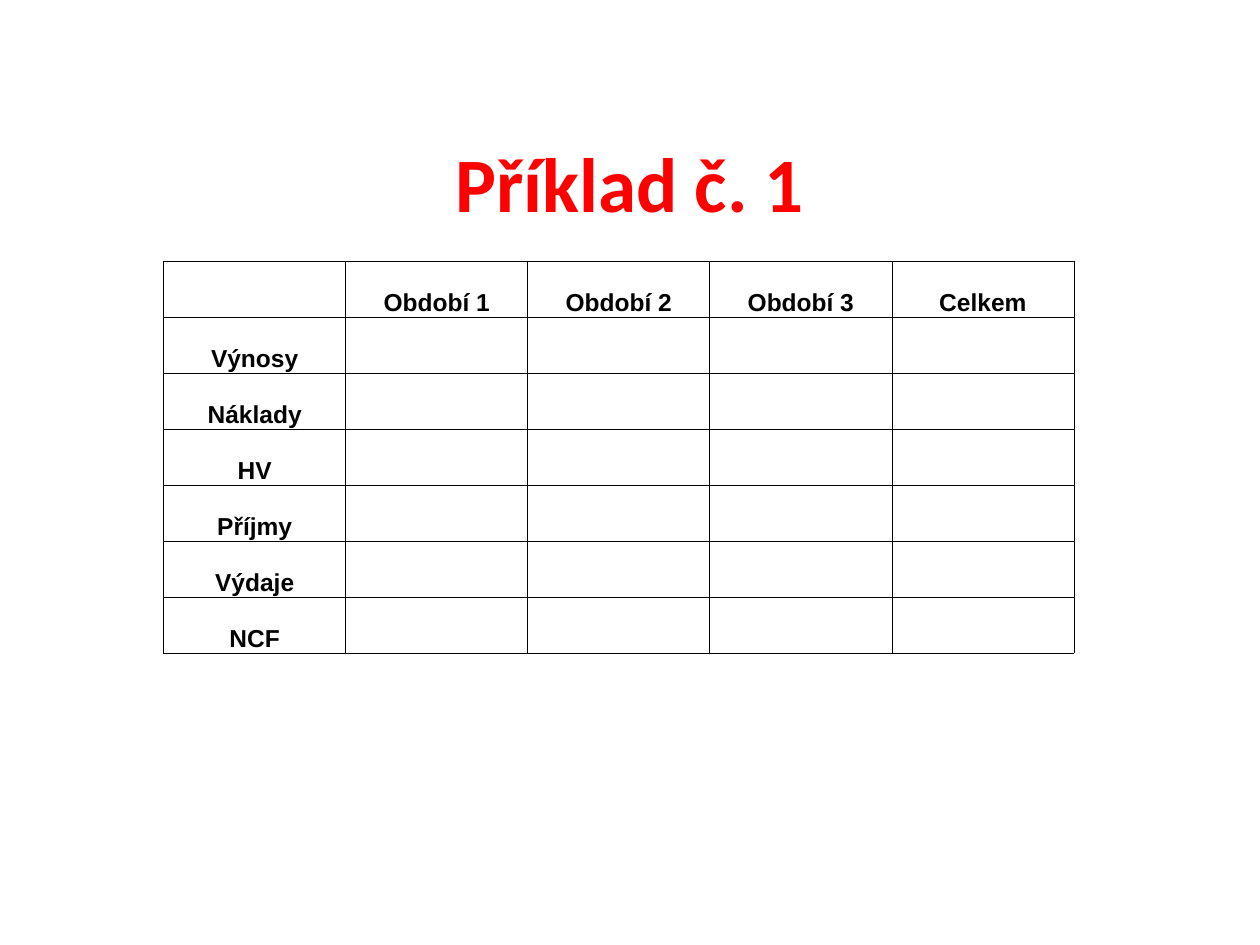
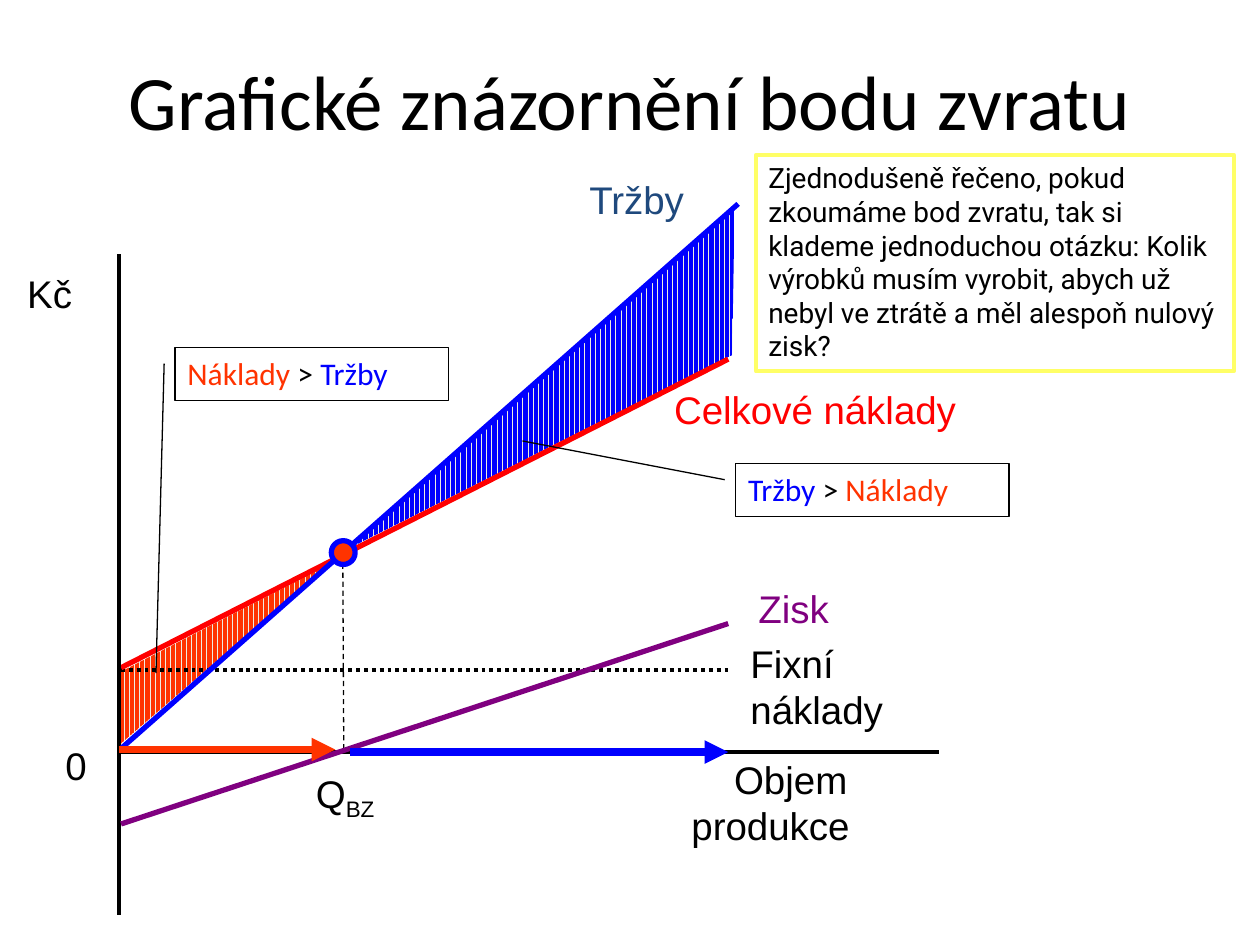
from lxml import etree
from pptx import Presentation
from pptx.dml.color import RGBColor
from pptx.enum.dml import MSO_LINE, MSO_PATTERN
from pptx.enum.shapes import MSO_CONNECTOR, MSO_SHAPE
from pptx.enum.text import MSO_ANCHOR, PP_ALIGN
from pptx.oxml.ns import qn
from pptx.util import Cm, Pt

BLACK = RGBColor(0x00, 0x00, 0x00)
WHITE = RGBColor(0xFF, 0xFF, 0xFF)
RED = RGBColor(0xFF, 0x00, 0x00)
ORANGE = RGBColor(0xFF, 0x33, 0x00)
BLUE = RGBColor(0x00, 0x00, 0xFF)
NAVY = RGBColor(0x1F, 0x49, 0x7D)
PURPLE = RGBColor(0x80, 0x00, 0x80)
YELLOW = RGBColor(0xFF, 0xFF, 0x66)
CREAM = RGBColor(0xEE, 0xEC, 0xE1)

STRAIGHT = MSO_CONNECTOR.STRAIGHT
RECTANGLE, OVAL = MSO_SHAPE.RECTANGLE, MSO_SHAPE.OVAL
CALLOUT = MSO_SHAPE.LINE_CALLOUT_2
DASH, DOT = MSO_LINE.DASH, MSO_LINE.ROUND_DOT
STRIPES = MSO_PATTERN.DARK_VERTICAL
LEFT, CENTER = PP_ALIGN.LEFT, PP_ALIGN.CENTER
TOP, MIDDLE, BOTTOM = MSO_ANCHOR.TOP, MSO_ANCHOR.MIDDLE, MSO_ANCHOR.BOTTOM

TITLE = {"name": "Calibri", "size": Pt(44), "bold": False}
LABEL = {"name": "Arial", "size": Pt(22)}
CALLOUT_TEXT = {"name": "Calibri", "size": Pt(18)}
NOTE = {"name": "Roboto", "size": Pt(16)}
TABLE_TEXT = {"name": "Arial", "size": Pt(14), "bold": True}


def lengths(values):
    return [Cm(value) for value in values]


class Deck:
    """Holds the presentation and draws on its current page."""

    def __init__(self):
        self.deck = Presentation()
        self.deck.slide_width, self.deck.slide_height = Cm(25.4), Cm(19.05)
        self.page = None

    def new_page(self):
        self.page = self.deck.slides.add_slide(self.deck.slide_layouts[6])

    def fill_text(self, frame, spans, style, align=LEFT):
        """Fill the first paragraph with (text, colour) spans."""
        para = frame.paragraphs[0]
        para.alignment = align
        for text, colour in spans:
            span = para.add_run()
            span.text = text
            for name, value in style.items():
                setattr(span.font, name, value)
            span.font.color.rgb = colour
        return para

    def text(self, place, spans, style=LABEL, align=LEFT, anchor=TOP):
        box = self.page.shapes.add_textbox(*lengths(place))
        box.text_frame.word_wrap = True
        box.text_frame.vertical_anchor = anchor
        return self.fill_text(box.text_frame, spans, style, align)

    def title(self, text, top, height, colour=BLACK, bold=False):
        self.text((1.27, top, 22.86, height), [(text, colour)],
                  {**TITLE, "bold": bold}, CENTER, MIDDLE)

    def line(self, start, end, colour, width, dash=None, arrow=False):
        line = self.page.shapes.add_connector(STRAIGHT, *lengths(start + end))
        line.line.color.rgb = colour
        line.line.width = Pt(width)
        if dash:
            line.line.dash_style = dash
        if arrow:
            outline = line._element.spPr.find(qn("a:ln"))
            etree.SubElement(outline, qn("a:tailEnd"), type="triangle")
        etree.SubElement(line._element.spPr, qn("a:effectLst"))

    def shape(self, kind, place, colour, width, fill=None):
        shape = self.page.shapes.add_shape(kind, *lengths(place))
        shape.shadow.inherit = False
        shape.line.color.rgb = colour
        shape.line.width = Pt(width)
        if fill is None:
            shape.fill.background()
        else:
            shape.fill.solid()
            shape.fill.fore_color.rgb = fill
        shape.text_frame.word_wrap = True
        shape.text_frame.vertical_anchor = TOP
        return shape

    def callout(self, left, top, leader_end, spans):
        box = self.shape(CALLOUT, (left, top, 5.51, 1.07), BLACK, 0.75)
        leader = (0.3, -0.04, 0.3, -0.04) + leader_end
        for index, value in enumerate(leader):
            box.adjustments[index] = value
        self.fill_text(box.text_frame, spans, CALLOUT_TEXT)

    def striped_area(self, points, colour):
        corners = [lengths(point) for point in points]
        builder = self.page.shapes.build_freeform(*corners[0])
        builder.add_line_segments(corners[1:], close=True)
        area = builder.convert_to_shape()
        area.shadow.inherit = False
        area.line.fill.background()
        area.fill.patterned()
        area.fill.pattern = STRIPES
        area.fill.fore_color.rgb = colour
        area.fill.back_color.rgb = CREAM

    def border(self, cell):
        properties = cell._tc.get_or_add_tcPr()
        for side in ("lnL", "lnR", "lnT", "lnB"):
            edge = etree.SubElement(properties, qn(f"a:{side}"), w=str(Pt(0.5)))
            fill = etree.SubElement(edge, qn("a:solidFill"))
            etree.SubElement(fill, qn("a:srgbClr"), val=str(BLACK))

    def table(self, left, top, column_width, row_height, headings, names):
        rows = [["", *headings]] + [[name] + [""] * len(headings) for name in names]
        count = len(rows[0])
        frame = self.page.shapes.add_table(
            len(rows), count,
            *lengths((left, top, column_width * count, row_height * len(rows))))
        table = frame.table
        table.first_row = table.horz_banding = False
        for column in table.columns:
            column.width = Cm(column_width)
        for row, texts in zip(table.rows, rows):
            row.height = Cm(row_height)
            for cell, text in zip(row.cells, texts):
                self.border(cell)
                cell.fill.background()
                cell.vertical_anchor = BOTTOM
                cell.margin_left = cell.margin_right = cell.margin_top = Cm(0.03)
                cell.margin_bottom = 0
                if text:
                    self.fill_text(cell.text_frame, [(text, BLACK)], TABLE_TEXT, CENTER)


def example_page(deck):
    deck.new_page()
    deck.title("Příklad č. 1", 2.08, 3.18, RED, True)
    deck.table(3.3, 5.26, 3.67, 1.13,
               ["Období 1", "Období 2", "Období 3", "Celkem"],
               ["Výnosy", "Náklady", "HV", "Příjmy", "Výdaje", "NCF"])


def break_even_page(deck):
    deck.new_page()
    origin_x, end_x, axis_y = 2.44, 14.68, 15.16

    # Profit and loss areas
    deck.striped_area([(7.01, 11.07), (14.81, 4.17), (14.76, 7.16)], BLUE)
    deck.striped_area([(origin_x, 13.54), (6.6, 11.4), (origin_x, 14.99)], ORANGE)
    deck.title("Grafické znázornění bodu zvratu", 0.91, 2.21)

    # Cost lines
    deck.line((origin_x, 13.51), (end_x, 13.51), BLACK, 2.25, DOT)
    deck.line((origin_x, 13.46), (end_x, 7.24), RED, 3)

    # Axes
    deck.line((2.39, 5.13), (2.39, 18.44), BLACK, 2.25)
    deck.line((origin_x, axis_y), (18.92, axis_y), BLACK, 2.25)

    # Labels of lines and axes
    for text, colour, place in (
        ("Celkové náklady", RED, (13.34, 7.65, 7.8, 3.3)),
        ("Tržby", NAVY, (11.63, 3.43, 3.07, 2.24)),
        ("Fixní náklady", BLACK, (14.88, 12.78, 4.85, 2.24)),
        ("0", BLACK, (1.07, 14.83, 1.55, 1.88)),
        ("Kč", BLACK, (0.3, 5.31, 2.46, 2.21)),
        ("Zisk", PURPLE, (15.04, 11.66, 2.79, 2.24)),
    ):
        deck.text(place, [(text, colour)])
    volume = deck.text((13.69, 15.11, 6.12, 2.24), [("Objem produkce", BLACK)])
    volume._p.get_or_add_pPr().set("indent", str(Cm(0.86)))
    quantity = deck.text((6.12, 15.39, 2.72, 2.24), [("Q", BLACK), ("BZ", BLACK)])
    quantity.runs[1]._r.get_or_add_rPr().set("baseline", "-25000")

    # Break-even, profit and revenue lines
    deck.line((6.91, 11.18), (6.93, axis_y), BLACK, 0.75, DASH)
    deck.line((origin_x, 16.61), (end_x, 12.57), PURPLE, 3)
    deck.line((origin_x, 15.09), (14.88, 4.11), BLUE, 3)

    # Loss and profit ranges with their callouts
    deck.callout(14.83, 9.35, (-0.43, -0.78),
                 [("Tržby", BLUE), (" > ", BLACK), ("Náklady", ORANGE)])
    deck.line((2.39, 15.11), (6.76, 15.11), ORANGE, 4.5, arrow=True)
    deck.line((7.06, axis_y), (end_x, axis_y), BLUE, 4.5, arrow=True)
    deck.callout(3.53, 7.01, (6.13, -0.07),
                 [("Náklady ", ORANGE), ("> ", BLACK), ("Tržby", BLUE)])

    # Break-even point and explanation
    deck.shape(OVAL, (6.68, 10.9, 0.48, 0.48), BLUE, 3, ORANGE)
    note = deck.shape(RECTANGLE, (15.24, 3.12, 9.63, 4.37), YELLOW, 2.25, WHITE)
    deck.fill_text(note.text_frame, [(
        "Zjednodušeně řečeno, pokud zkoumáme bod zvratu, tak si klademe "
        "jednoduchou otázku: Kolik výrobků musím vyrobit, abych už nebyl "
        "ve ztrátě a měl alespoň nulový zisk?", BLACK)], NOTE)


def main():
    deck = Deck()
    example_page(deck)
    break_even_page(deck)
    deck.deck.save("out.pptx")


if __name__ == "__main__":
    main()
